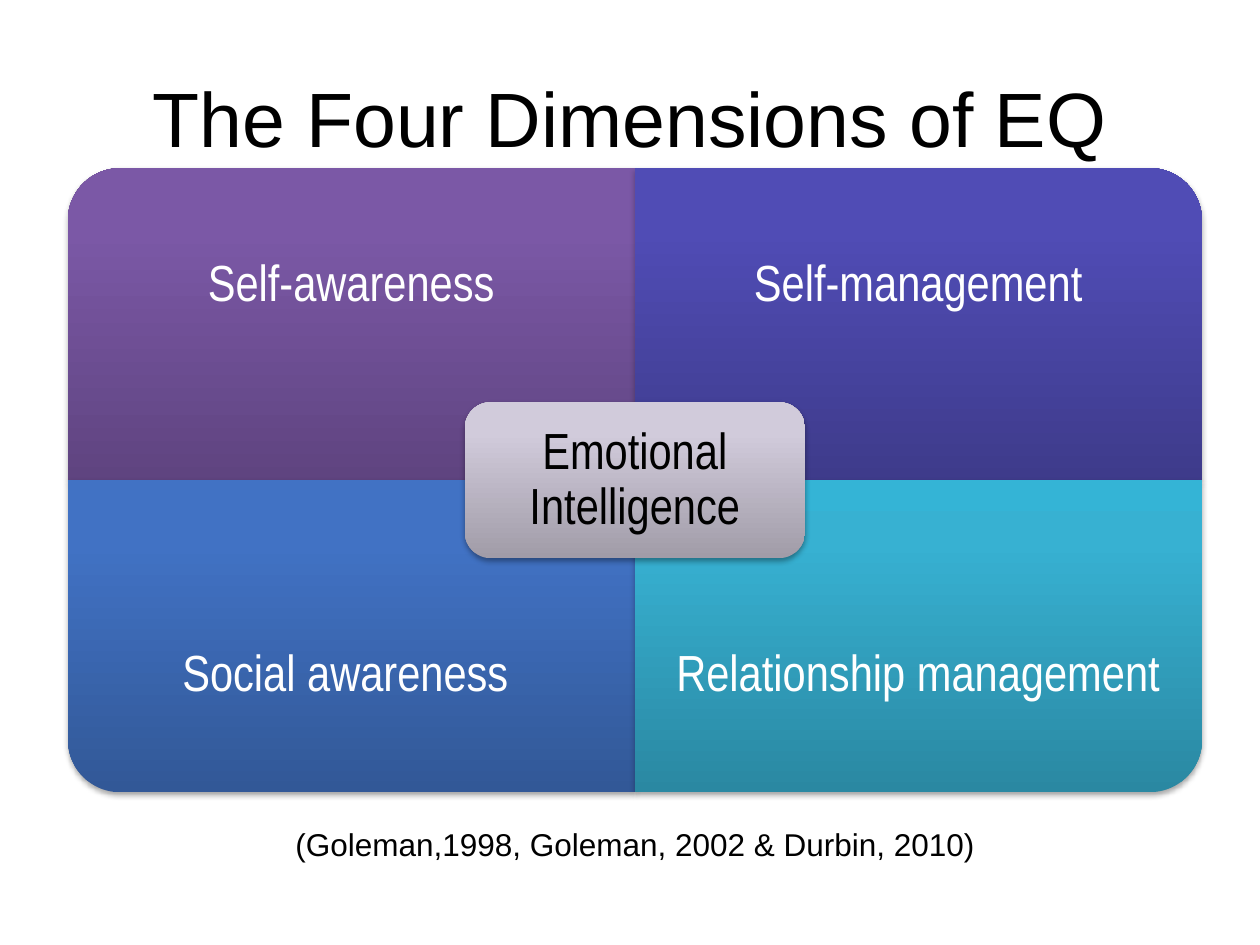
from dataclasses import dataclass

from lxml import etree
from pptx import Presentation
from pptx import util as u
from pptx.dml.color import RGBColor
from pptx.enum import shapes, text
from pptx.oxml import parse_xml

NS = 'xmlns:a="http://schemas.openxmlformats.org/drawingml/2006/main"'


@dataclass(frozen=True)
class Theme:
    ink: str = "000000"
    light: str = "FFFFFF"
    font: str = "Arial"
    narrow: str = "Arial Narrow"
    title_size: int = 44
    label_size: int = 29
    citation_size: int = 18
    # Gradient stops from bottom to top
    purple: tuple = ("5F4480", "7B58A6", "7C57A8")
    indigo: tuple = ("3E3B8B", "504CB5", "4F4BB8")
    blue: tuple = ("325897", "4172C4", "3F72C7")
    teal: tuple = ("2A88A2", "37B1D2", "34B4D6")
    grey: tuple = ("A19CA8", "D1CBDB", "D2CBDC")


THEME = Theme()

# label, gradient, column, row, rotation that turns the round corner outwards
DIMENSIONS = [
    ("Self-awareness", THEME.purple, 0, 0, 270),
    ("Self-management", THEME.indigo, 1, 0, 0),
    ("Social awareness ", THEME.blue, 0, 1, 180),
    ("Relationship management", THEME.teal, 1, 1, 90),
]


def cm(box):
    return [u.Cm(length) for length in box]


def write(frame, words, font, size, color, line_spacing=None, **frame_format):
    frame_format = {"word_wrap": True, **frame_format}
    for name, value in frame_format.items():
        setattr(frame, name, value)
    paragraph = frame.paragraphs[0]
    paragraph.alignment = text.PP_ALIGN.CENTER
    paragraph.line_spacing = line_spacing
    run = paragraph.add_run()
    run.text = words
    for name, value in {"name": font, "size": u.Pt(size)}.items():
        setattr(run.font, name, value)
    run.font.color.rgb = RGBColor.from_string(color)


def add_label(slide, box, words, color, inset):
    label = slide.shapes.add_textbox(*cm(box))
    margins = {f"margin_{side}": u.Cm(inset) for side in ("left", "top", "right", "bottom")}
    write(label.text_frame, words, THEME.narrow, THEME.label_size, color, 0.9,
          vertical_anchor=text.MSO_ANCHOR.MIDDLE, **margins)


def add_tile(slide, kind, box, colors, rotation=0):
    """Add a shaded tile that fills the box once it is rotated."""
    left, top, width, height = box
    if rotation % 180:
        left, top = left + (width - height) / 2, top + (height - width) / 2
        width, height = height, width
    tile = slide.shapes.add_shape(kind, *cm((left, top, width, height)))
    tile.rotation = rotation
    tile.line.fill.background()
    stops = "".join(
        f'<a:gs pos="{pos}"><a:srgbClr val="{color}"/></a:gs>'
        for pos, color in zip((0, 80000, 100000), colors))
    gradient = parse_xml(
        f'<a:gradFill {NS} rotWithShape="0"><a:gsLst>{stops}</a:gsLst>'
        '<a:lin ang="16200000" scaled="0"/></a:gradFill>')
    shadow = parse_xml(
        f'<a:effectLst {NS}><a:outerShdw blurRad="40000" dist="23000" dir="5400000" '
        'rotWithShape="0"><a:srgbClr val="000000"><a:alpha val="35000"/></a:srgbClr>'
        '</a:outerShdw></a:effectLst>')
    outline = tile.line._get_or_add_ln()
    outline.addprevious(gradient)
    outline.addnext(shadow)


def add_title(slide, box, words):
    title = slide.shapes.title
    title.left, title.top, title.width, title.height = cm(box)
    write(title.text_frame, words, THEME.font, THEME.title_size, THEME.ink,
          vertical_anchor=text.MSO_ANCHOR.MIDDLE)


def add_matrix(slide, box, center_words):
    left, top, width, height = box
    tile_width, tile_height = width / 2, height / 2
    label_height = tile_height * 0.75
    for words, colors, column, row, rotation in DIMENSIONS:
        x, y = left + column * tile_width, top + row * tile_height
        add_tile(slide, shapes.MSO_SHAPE.ROUND_1_RECTANGLE,
                 (x, y, tile_width, tile_height), colors, rotation)
        label_top = y + row * (tile_height - label_height)
        add_label(slide, (x, label_top, tile_width, label_height), words, THEME.light, 0.58)

    core_width, core_height, pad = width * 0.3, height / 4, 0.15
    x, y = left + (width - core_width) / 2, top + (height - core_height) / 2
    add_tile(slide, shapes.MSO_SHAPE.ROUNDED_RECTANGLE,
             (x, y, core_width, core_height), THEME.grey)
    add_label(slide, (x + pad, y + pad, core_width - 2 * pad, core_height - 2 * pad),
              center_words, THEME.ink, 0.3)


def add_citation(slide, box, words):
    citation = slide.shapes.add_textbox(*cm(box))
    write(citation.text_frame, words, THEME.font, THEME.citation_size, THEME.ink,
          auto_size=text.MSO_AUTO_SIZE.SHAPE_TO_FIT_TEXT)


def main():
    deck = Presentation()
    deck.slide_width, deck.slide_height = u.Cm(25.4), u.Cm(19.05)
    slide = deck.slides.add_slide(deck.slide_layouts.get_by_name("Title Only"))
    add_title(slide, (1.27, 0.76, 22.86, 3.18), "The Four Dimensions of EQ")
    add_matrix(slide, (1.37, 3.39, 22.86, 12.58), "Emotional Intelligence")
    add_citation(slide, (3.18, 16.51, 19.25, 1.02),
                 "(Goleman,1998, Goleman, 2002 & Durbin, 2010)")
    deck.save("out.pptx")


if __name__ == "__main__":
    main()
